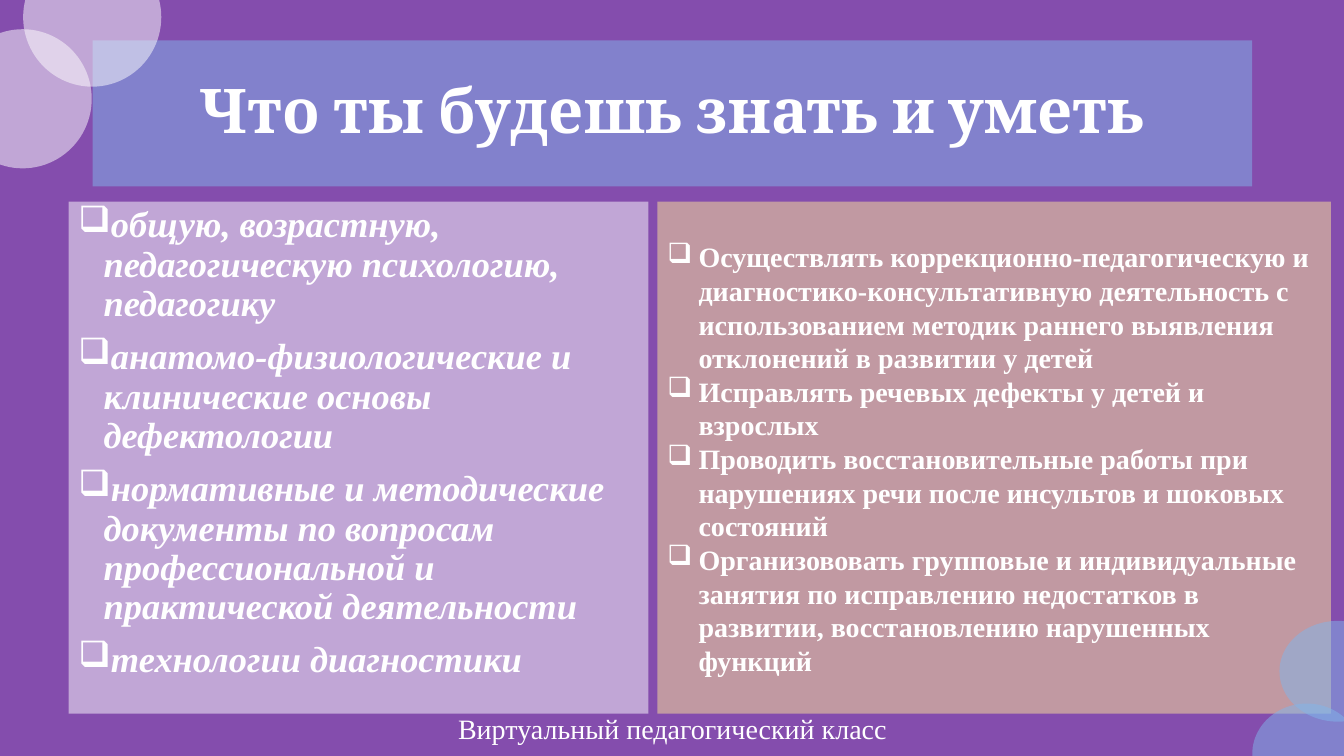
from dataclasses import dataclass

from lxml import etree
from pptx import Presentation
from pptx.dml.color import RGBColor
from pptx.enum.shapes import MSO_SHAPE
from pptx.enum.text import MSO_ANCHOR, MSO_AUTO_SIZE, PP_ALIGN
from pptx.oxml.ns import qn
from pptx.util import Inches, Pt

RECT, OVAL = MSO_SHAPE.RECTANGLE, MSO_SHAPE.OVAL
TOP, MIDDLE = MSO_ANCHOR.TOP, MSO_ANCHOR.MIDDLE
LEFT, CENTER = PP_ALIGN.LEFT, PP_ALIGN.CENTER
NO_FIT = MSO_AUTO_SIZE.NONE


@dataclass(frozen=True)
class Theme:
    back: str = "844DAD"
    white: str = "FFFFFF"
    blue: str = "81B6EB"
    sand: str = "FFE699"
    head: str = "Cambria"
    body: str = "Times New Roman"
    title: int = 44
    large: int = 26
    small: int = 20


THEME = Theme()

TITLE = "Что ты будешь знать и уметь"
FOOTER = "Виртуальный педагогический класс"
KNOW = [
    "общую, возрастную, педагогическую психологию, педагогику",
    "анатомо-физиологические и клинические основы дефектологии",
    "нормативные и методические документы по вопросам "
    "профессиональной и практической деятельности",
    "технологии диагностики",
]
SKILLS = [
    "Осуществлять коррекционно-педагогическую и диагностико-консультативную "
    "деятельность с использованием методик раннего выявления отклонений "
    "в развитии у детей",
    "Исправлять речевых дефекты у детей и взрослых",
    "Проводить восстановительные работы при нарушениях речи "
    "после инсультов и шоковых состояний",
    "Организововать групповые и индивидуальные занятия по исправлению "
    "недостатков в развитии, восстановлению нарушенных функций",
]

# Left, top, width, height in inches
HEAD_BOX = (0.92, 0.4, 11.5, 1.45)
KNOW_BOX = (0.68, 2, 5.75, 5.08)
SKILL_BOX = (6.52, 2, 6.68, 5.08)
FOOT_BOX = (4.09, 7.07, 5.16, 0.31)
CIRCLES = [
    ((12.42, 6.98, 1.08, 1), THEME.blue),
    ((-0.46, 0.29, 1.37, 1.38), THEME.white),
    ((0.23, -0.52, 1.37, 1.38), THEME.white),
    ((12.69, 6.16, 1.16, 1), THEME.blue),
]


def to_emu(box):
    return [Inches(n) for n in box]


def add_glass(slide, kind, box, color):
    """Add a borderless shape with a half-transparent fill."""
    shape = slide.shapes.add_shape(kind, *to_emu(box))
    shape.shadow.inherit = False
    shape.line.fill.background()
    shape.fill.solid()
    shape.fill.fore_color.rgb = RGBColor.from_string(color)
    tint = shape.fill._xPr.find(".//" + qn("a:srgbClr"))
    etree.SubElement(tint, qn("a:alpha"), val="50000")
    return shape


def add_text_box(slide, box):
    return slide.shapes.add_textbox(*to_emu(box))


def set_frame(shape, anchor):
    frame = shape.text_frame
    frame.word_wrap = True
    frame.auto_size = NO_FIT
    frame.vertical_anchor = anchor
    return frame


def add_run(para, text, font, size, bold=False, italic=False):
    run = para.add_run()
    run.text = text
    run.font.name = font
    run.font.size = Pt(size)
    run.font.bold = bold
    run.font.italic = italic
    run.font.color.rgb = RGBColor.from_string(THEME.white)


def add_line(shape, text, font, size, bold=False):
    """Write one centred line into a shape."""
    para = set_frame(shape, MIDDLE).paragraphs[0]
    para.alignment = CENTER
    add_run(para, text, font, size, bold)
    return para


def add_list(shape, items, size, indent, italic=False, space=0, lines=1.0):
    """Fill a shape with a list that has box bullets."""
    frame = set_frame(shape, TOP)
    for i, item in enumerate(items):
        para = frame.add_paragraph() if i else frame.paragraphs[0]
        para.alignment = LEFT
        para.line_spacing = lines
        para.space_before = Pt(space)
        props = para._p.get_or_add_pPr()
        props.set("marL", str(Inches(indent)))
        props.set("indent", str(-Inches(indent)))
        etree.SubElement(props, qn("a:buChar"), char="❑")
        add_run(para, item, THEME.body, size, True, italic)
    return frame


def add_title(slide):
    title = slide.shapes.title
    title.left, title.top, title.width, title.height = to_emu(HEAD_BOX)
    para = add_line(title, TITLE, THEME.head, THEME.title, True)
    para.line_spacing = 0.9
    # Bring the title in front of its panel
    slide.shapes._spTree.append(title._element)


def main():
    deck = Presentation()
    deck.slide_width, deck.slide_height = Inches(13.33), Inches(7.5)
    slide = deck.slides.add_slide(deck.slide_layouts[5])
    slide.background.fill.solid()
    slide.background.fill.fore_color.rgb = RGBColor.from_string(THEME.back)

    # Skills panel
    panel = add_glass(slide, RECT, SKILL_BOX, THEME.sand)
    frame = add_list(panel, SKILLS, THEME.small, 0.31)
    frame.margin_top = Inches(0.38)

    # Panels for the knowledge list and the title
    add_glass(slide, RECT, KNOW_BOX, THEME.white)
    add_glass(slide, RECT, HEAD_BOX, THEME.blue)
    add_title(slide)
    add_list(add_text_box(slide, KNOW_BOX), KNOW, THEME.large, 0.25,
             italic=True, space=10, lines=0.9)

    # Corner circles
    for box, color in CIRCLES:
        add_glass(slide, OVAL, box, color)

    # Footer
    add_line(add_text_box(slide, FOOT_BOX), FOOTER, THEME.body, THEME.small)

    deck.save("out.pptx")


if __name__ == "__main__":
    main()
